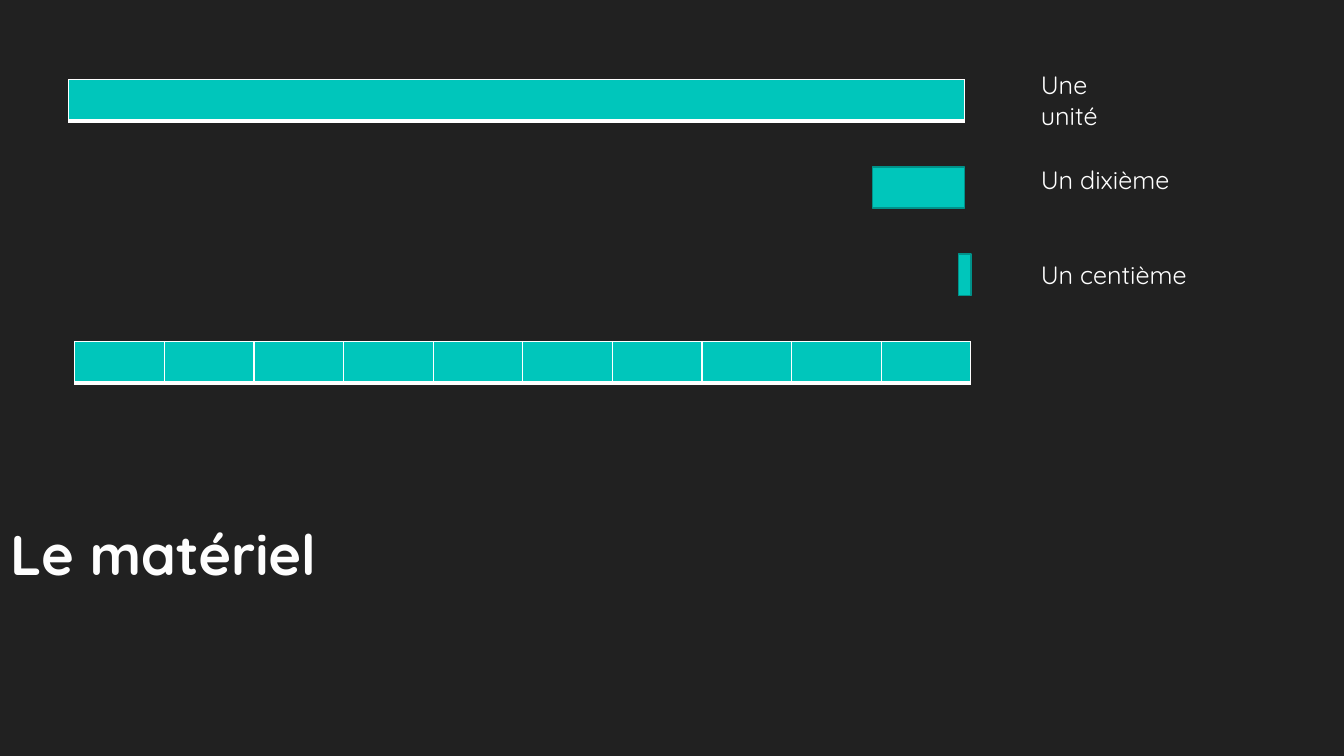
from lxml import etree
from pptx import Presentation
from pptx import util as u
from pptx.dml.color import RGBColor
from pptx.enum import shapes, text
from pptx.oxml import parse_xml
from pptx.oxml.ns import nsdecls, qn

FONT = "Quicksand"
TEAL = "00C6BB"
WHITE = "FFFFFF"
BAR_WIDTH = 22.58
BAR_HEIGHT = 1.04
ROW_STEP = 2.2
LABEL_STEP = 2.39


def paint(color_format, value):
    color_format.rgb = RGBColor.from_string(value)


def fill_with(fill, value):
    fill.solid()
    paint(fill.fore_color, value)


def style_text(frame, size, color, bold=False):
    for para in frame.paragraphs:
        for span in para.runs:
            span.font.name = FONT
            span.font.size = u.Pt(size)
            span.font.bold = bold
            paint(span.font.color, color)


def add_borders(cell):
    properties = cell._tc.get_or_add_tcPr()
    for index, (side, points) in enumerate((("L", 1), ("R", 1), ("T", 1), ("B", 3))):
        border = parse_xml(
            f'<a:ln{side} {nsdecls("a")} w="{u.Pt(points)}">'
            f'<a:solidFill><a:srgbClr val="{WHITE}"/></a:solidFill></a:ln{side}>'
        )
        properties.insert(index, border)


def add_strip(page, left, top, parts):
    frame = page.shapes.add_table(
        1, parts, u.Cm(left), u.Cm(top), u.Cm(BAR_WIDTH), u.Cm(BAR_HEIGHT)
    )
    table = frame.table
    table.first_row = False
    table.horz_banding = False
    for column in table.columns:
        column.width = u.Cm(BAR_WIDTH / parts)
    for cell in table.iter_cells():
        cell.margin_top = cell.margin_bottom = 0
        fill_with(cell.fill, TEAL)
        add_borders(cell)


def add_piece(page, left, top, width):
    piece = page.shapes.add_shape(
        shapes.MSO_SHAPE.RECTANGLE,
        u.Cm(left), u.Cm(top), u.Cm(width), u.Cm(BAR_HEIGHT),
    )
    piece.shadow.inherit = False
    fill_with(piece.fill, TEAL)
    paint(piece.line.color, "00928A")
    piece.line.width = u.Pt(1.25)


def add_bars(page, left, top):
    right = left + BAR_WIDTH
    tenth, hundredth = 2.32, 0.31
    add_strip(page, left, top, 1)
    add_piece(page, right - tenth, top + ROW_STEP, tenth)
    add_piece(page, right - hundredth / 2, top + 2 * ROW_STEP, hundredth)
    add_strip(page, left + hundredth / 2, top + 3 * ROW_STEP, 10)


def add_labels(page, left, top):
    labels = (("Une unité", 3.25, 1.8), ("Un dixième", 4.9, 1.03), ("Un centième", 4.83, 1.03))
    for index, (wording, width, height) in enumerate(labels):
        box = page.shapes.add_textbox(
            u.Cm(left), u.Cm(top + index * LABEL_STEP), u.Cm(width), u.Cm(height)
        )
        frame = box.text_frame
        frame.word_wrap = True
        frame.auto_size = text.MSO_AUTO_SIZE.SHAPE_TO_FIT_TEXT
        frame.text = wording
        style_text(frame, 18, WHITE)


def add_text_shadow(span):
    fill = span._r.get_or_add_rPr().find(qn("a:solidFill"))
    effects = etree.Element(qn("a:effectLst"))
    shadow = etree.SubElement(
        effects, qn("a:outerShdw"), blurRad="38100", dist="25400", dir="2700000"
    )
    color = etree.SubElement(shadow, qn("a:srgbClr"), val="000000")
    etree.SubElement(color, qn("a:alpha"), val="50000")
    fill.addnext(effects)


def place_title(page, left, top, width, height):
    title = page.shapes.title
    title.left, title.top = u.Cm(left), u.Cm(top)
    title.width, title.height = u.Cm(width), u.Cm(height)
    frame = title.text_frame
    frame.text = "Le matériel"
    frame.word_wrap = True
    frame.auto_size = text.MSO_AUTO_SIZE.NONE
    frame.vertical_anchor = text.MSO_ANCHOR.BOTTOM
    para = frame.paragraphs[0]
    para.alignment = text.PP_ALIGN.LEFT
    style_text(frame, 40, "FEFEFE", bold=True)
    add_text_shadow(para.runs[0])


def main():
    deck = Presentation()
    deck.slide_width, deck.slide_height = u.Cm(33.87), u.Cm(19.05)
    page = deck.slides.add_slide(deck.slide_layouts[5])
    fill_with(page.background.fill, "212121")
    add_bars(page, 1.73, 2.01)
    add_labels(page, 25.98, 1.63)
    place_title(page, 0, 13.33, 29.34, 1.58)
    deck.save("out.pptx")


if __name__ == "__main__":
    main()
